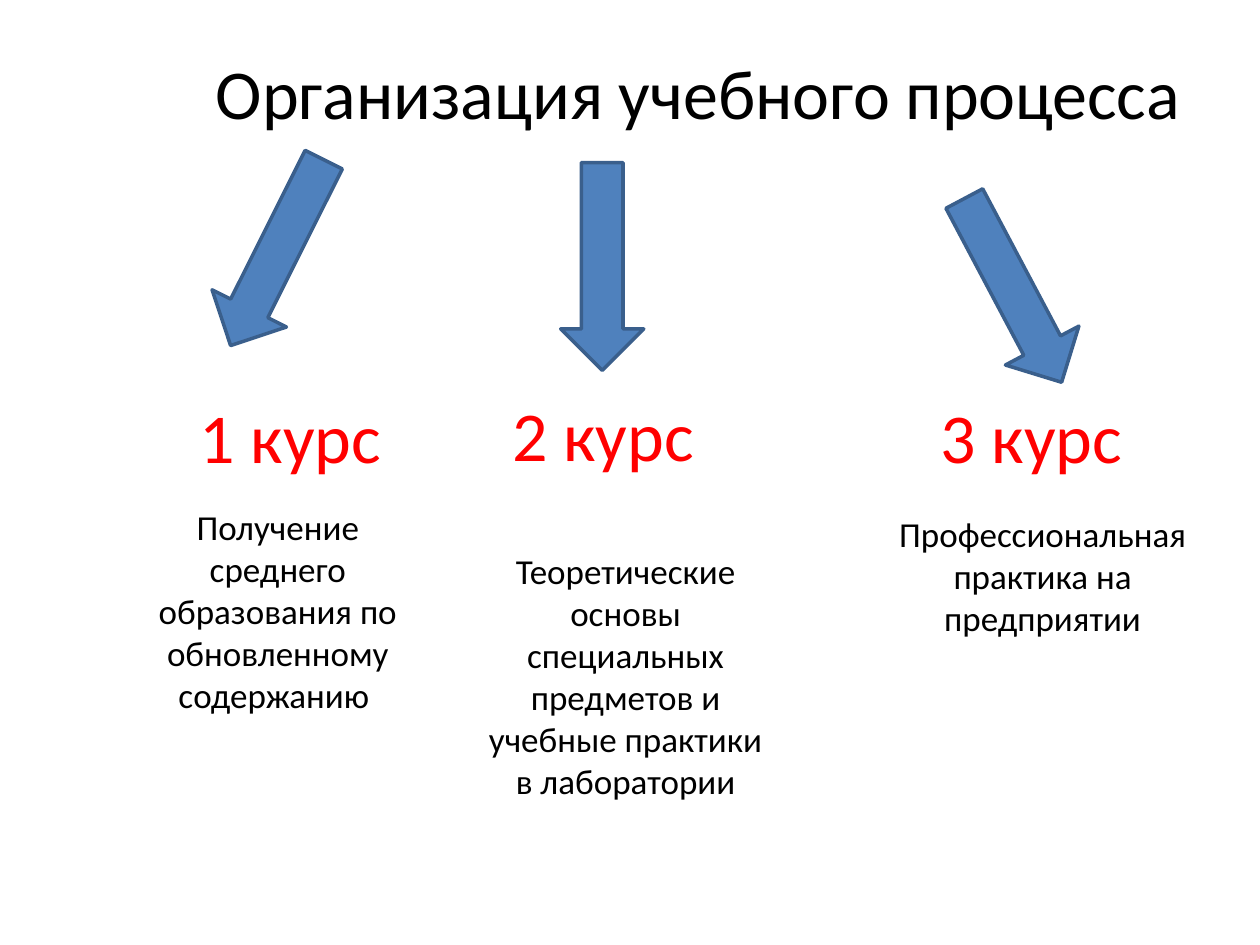
from dataclasses import dataclass

from pptx import Presentation
from pptx.dml.color import RGBColor
from pptx.enum.shapes import MSO_SHAPE
from pptx.enum.text import MSO_ANCHOR, PP_ALIGN
from pptx.util import Inches, Pt

DOWN_ARROW = MSO_SHAPE.DOWN_ARROW
BOTTOM = MSO_ANCHOR.BOTTOM
CENTER = PP_ALIGN.CENTER

# The grid has 100 columns and 75 rows of square cells
COLUMNS, ROWS = 100, 75
CELL = Inches(0.1)


@dataclass(frozen=True)
class Theme:
    font: str = "Calibri"
    ink: str = "000000"
    accent: str = "FF0000"
    arrow_fill: str = "4F81BD"
    arrow_line: str = "3A5F8C"
    line_width: float = 2
    heading: float = 40
    body: float = 20


class CourseSlide:
    """Holds the theme and the current slide; lengths are in grid cells."""

    TEXT_HEIGHT = 8.8
    ARROW_SIZE = (6.6, 16.5)

    def __init__(self, deck, theme):
        self.theme = theme
        self.slide = deck.slides.add_slide(deck.slide_layouts[6])

    @staticmethod
    def cells(*counts):
        return [round(count * CELL) for count in counts]

    def text(self, wording, left, top, width, size, color):
        place = self.cells(left, top, width, self.TEXT_HEIGHT)
        frame = self.slide.shapes.add_textbox(*place).text_frame
        frame.word_wrap = True
        frame.vertical_anchor = BOTTOM
        paragraph = frame.paragraphs[0]
        paragraph.alignment = CENTER
        run = paragraph.add_run()
        run.text = wording
        for name, value in {"name": self.theme.font, "size": Pt(size)}.items():
            setattr(run.font, name, value)
        run.font.color.rgb = RGBColor.from_string(color)

    def heading(self, wording, left, top, width, color):
        self.text(wording, left, top, width, self.theme.heading, color)

    def body(self, wording, left, top, width):
        self.text(wording, left, top, width, self.theme.body, self.theme.ink)

    def arrow(self, left, top, rotation):
        place = self.cells(left, top, *self.ARROW_SIZE)
        arrow = self.slide.shapes.add_shape(DOWN_ARROW, *place)
        arrow.rotation = rotation
        arrow.shadow.inherit = False
        arrow.fill.solid()
        arrow.fill.fore_color.rgb = RGBColor.from_string(self.theme.arrow_fill)
        arrow.line.color.rgb = RGBColor.from_string(self.theme.arrow_line)
        arrow.line.width = Pt(self.theme.line_width)


# Each course: arrow (left, top, rotation), label (left, top),
# content (left, top, width)
COURSES = [
    ("1 курс", "Получение среднего образования по обновленному содержанию ",
     (18.7, 11.8, 26.6), (13.8, 29.6), (9.8, 48.5, 24.5)),
    ("2 курс", "Теоретические основы специальных предметов и учебные практики "
     "в лаборатории",
     (44.5, 12.9, 0), (38.6, 29.4), (37.4, 55.3, 24.5)),
    ("3 курс", "Профессиональная практика на предприятии",
     (77.1, 14.8, 332.1), (72.6, 29.6), (68.5, 42.4, 28.5)),
]
LABEL_WIDTH = 18.5


def main():
    deck = Presentation()
    deck.slide_width, deck.slide_height = COLUMNS * CELL, ROWS * CELL
    theme = Theme()
    page = CourseSlide(deck, theme)

    # Title
    page.heading("Организация учебного процесса", 6.7, 2.3, 97.4, theme.ink)

    # Courses: arrow, label and content
    for label, content, arrow_place, label_place, content_place in COURSES:
        page.arrow(*arrow_place)
        page.heading(label, *label_place, LABEL_WIDTH, theme.accent)
        page.body(content, *content_place)

    deck.save("out.pptx")


if __name__ == "__main__":
    main()
